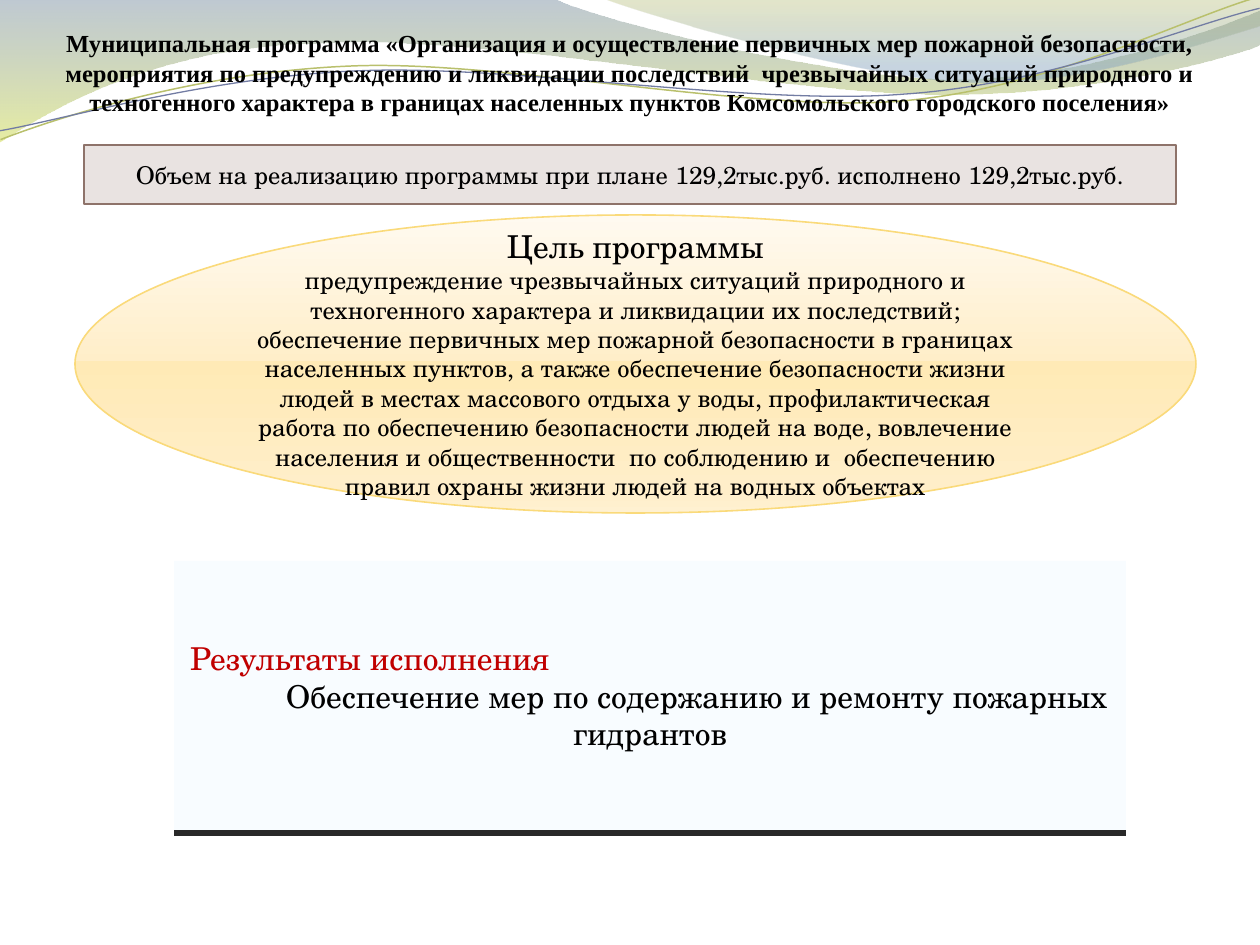
from lxml import etree
from pptx import Presentation
from pptx import util as u
from pptx.dml.color import RGBColor
from pptx.enum import shapes as sh, text as tx
from pptx.oxml.ns import qn

PX = 914400 / 126
SERIF, SCHOLA = "Times New Roman", "TeX Gyre Schola"
MID, LEFT = tx.PP_ALIGN.CENTER, tx.PP_ALIGN.LEFT
HUE = {
    "black": "000000", "red": "C00000",
    "slate": "72889B", "lime": "D3DE57", "olive": "A4AC50", "sky": "84A3BD",
    "moss": "B9C06C", "indigo": "727CA3",
    "stone": "E9E3E1", "brown": "8E736A", "gold": "FADA7A",
    "cream": "FFFAF0", "sand": "FFEEC9", "honey": "FFEAB6", "pale": "FFF1D1",
    "ice": "F8FCFF",
}

deck = Presentation()
deck.slide_width, deck.slide_height = u.Inches(10), u.Inches(7.5)
page = deck.slides.add_slide(deck.slide_layouts[6])


def trace(start, steps, closed):
    """Draw an outline; a 2-tuple is a line, a 6-tuple a cubic curve."""
    ends = [start] + [step[-2:] for step in steps]
    pen = page.shapes.build_freeform(*start, scale=PX)
    pen.add_line_segments(ends[1:], close=closed)
    form = pen.convert_to_shape()
    form.shadow.inherit = False
    left, top = (min(axis) for axis in zip(*ends))
    legs = form._element.spPr.findall(".//" + qn("a:lnTo"))
    for leg, step in zip(legs, steps):
        if len(step) == 6:
            bend = etree.Element(qn("a:cubicBezTo"))
            for x, y in zip(step[::2], step[1::2]):
                etree.SubElement(bend, qn("a:pt"), x=str(x - left), y=str(y - top))
            leg.getparent().replace(leg, bend)
    return form


def shade(form, stops):
    """Fill from top to bottom; each stop is (percent, hue, opacity)."""
    form.fill.gradient()
    form.fill.gradient_angle = 270
    row = form._element.spPr.find(".//" + qn("a:gsLst"))
    for old in list(row):
        row.remove(old)
    for pos, hue, alpha in stops:
        stop = etree.SubElement(row, qn("a:gs"), pos=str(pos * 1000))
        tint = etree.SubElement(stop, qn("a:srgbClr"), val=HUE[hue])
        if alpha < 100:
            etree.SubElement(tint, qn("a:alpha"), val=str(alpha * 1000))


# Waves along the top edge
bands = [
    ((0, 0), [(554, -1), (600, 21, 837, 79, 955, 79), (1075, 79, 1207, 33, 1260, 11),
              (1261, 45), (1239, 55, 1096, 96, 940, 94), (784, 94, 481, 35, 324, 43),
              (163, 45, 58, 105, -1, 142), (0, 0)],
     [(0, "slate", 45), (100, "lime", 55)]),
    ((604, -1), [(641, 14, 859, 78, 969, 82), (1079, 87, 1211, 40, 1260, 26),
                 (1260, 0), (604, -1)],
     [(0, "olive", 30), (80, "sky", 45)]),
]
for start, steps, stops in bands:
    band = trace(start, steps, True)
    band.line.fill.background()
    shade(band, stops)

waves = [
    ((-2, 110), [(58, 90, 199, 52, 350, 53), (499, 53, 745, 118, 896, 114),
                 (1049, 109, 1184, 45, 1260, 27)], "moss", 0.85),
    ((-2, 101), [(57, 94, 207, 57, 357, 58), (509, 58, 750, 112, 902, 107),
                 (1052, 104, 1187, 52, 1262, 38)], "indigo", 0.75),
]
for start, steps, hue, width in waves:
    wave = trace(start, steps, False)
    wave.rotation = 357.3
    wave.fill.background()
    wave.line.color.rgb = RGBColor.from_string(HUE[hue])
    wave.line.width = u.Pt(width)

# Title and panels
RECT, OVAL = sh.MSO_SHAPE.RECTANGLE, sh.MSO_SHAPE.OVAL
glow = [(0, "cream", 100), (49, "sand", 100), (49, "honey", 100),
        (92, "sand", 100), (100, "pale", 100)]
# kind, box, fill, line, side inset, paragraphs (text, size, font, bold, hue, align, indent)
parts = [
    (None, (0, 21, 1260, 103), None, None, 12, [
        ("Муниципальная программа «Организация и осуществление первичных мер пожарной "
         "безопасности, мероприятия по предупреждению и ликвидации последствий  "
         "чрезвычайных ситуаций природного и техногенного характера в границах "
         "населенных пунктов Комсомольского городского поселения»",
         14, SERIF, True, "black", MID, 0)]),
    (RECT, (84, 145, 1092, 59), "stone", "brown", 12, [
        ("Объем на реализацию программы при плане 129,2тыс.руб. исполнено 129,2тыс.руб.",
         14, SCHOLA, False, "black", MID, 0)]),
    (OVAL, (75, 215, 1121, 298), glow, "gold", 12, [
        ("Цель программы", 18, SCHOLA, False, "black", MID, 0),
        ("предупреждение чрезвычайных ситуаций природного и техногенного характера и "
         "ликвидации их последствий; обеспечение первичных мер пожарной безопасности в "
         "границах населенных пунктов, а также обеспечение безопасности жизни людей в "
         "местах массового отдыха у воды, профилактическая работа по обеспечению "
         "безопасности людей на воде, вовлечение населения и общественности  по "
         "соблюдению и  обеспечению правил охраны жизни людей на водных объектах",
         14, SCHOLA, False, "black", MID, 0)]),
    (RECT, (174, 561, 952, 269), "ice", None, 16, [
        ("Результаты исполнения", 18, SCHOLA, False, "red", LEFT, 0),
        ("Обеспечение мер по содержанию и ремонту пожарных гидрантов",
         18, SCHOLA, False, "black", MID, 94)]),
]
for kind, box, fill, line, inset, paras in parts:
    spot = [round(n * PX) for n in box]
    if kind is None:
        part = page.shapes.add_textbox(*spot)
    else:
        part = page.shapes.add_shape(kind, *spot)
        part.shadow.inherit = False
        if isinstance(fill, list):
            shade(part, fill)
        else:
            part.fill.solid()
            part.fill.fore_color.rgb = RGBColor.from_string(HUE[fill])
        if line:
            part.line.color.rgb = RGBColor.from_string(HUE[line])
            part.line.width = u.Pt(0.9)
        else:
            part.line.fill.background()
    frame = part.text_frame
    side = round(inset * PX)
    look = {"word_wrap": True, "vertical_anchor": tx.MSO_ANCHOR.MIDDLE,
            "margin_left": side, "margin_right": side}
    for key, val in look.items():
        setattr(frame, key, val)
    for i, (words, size, face, bold, hue, align, indent) in enumerate(paras):
        para = frame.add_paragraph() if i else frame.paragraphs[0]
        para.alignment = align
        if indent:
            para._p.get_or_add_pPr().set("indent", str(round(indent * PX)))
        run = para.add_run()
        run.text = words
        for key, val in {"size": u.Pt(size), "name": face, "bold": bold}.items():
            setattr(run.font, key, val)
        run.font.color.rgb = RGBColor.from_string(HUE[hue])

# Hard shadow below the results panel, the last part placed
cast = etree.SubElement(part._element.spPr.find(qn("a:effectLst")), qn("a:outerShdw"),
                        blurRad="0", dist=str(round(6 * PX)), dir="5400000",
                        algn="ctr", rotWithShape="0")
tint = etree.SubElement(cast, qn("a:srgbClr"), val=HUE["black"])
etree.SubElement(tint, qn("a:alpha"), val="83000")

deck.save("out.pptx")
